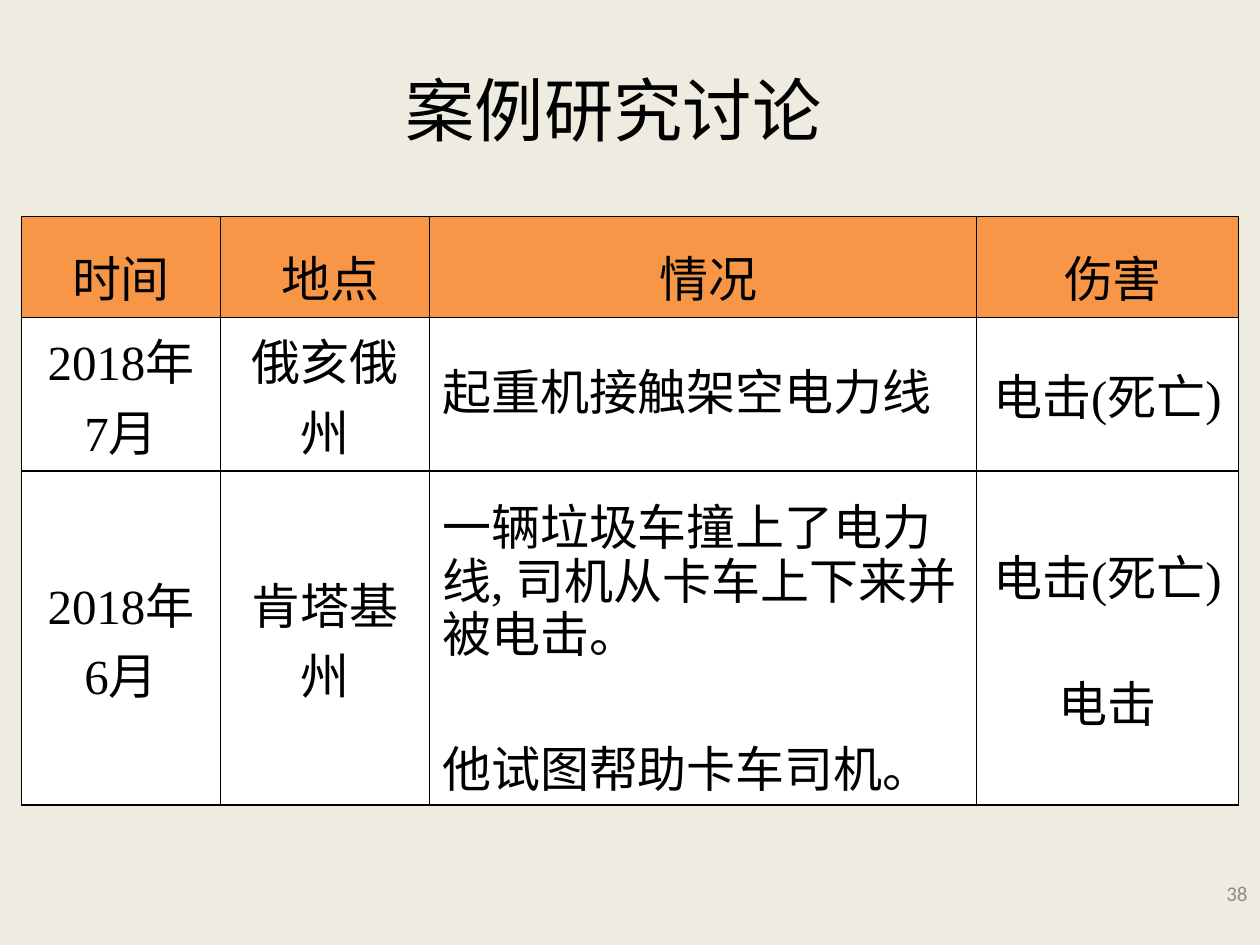
from lxml import etree
from pptx import Presentation
from pptx import util as u
from pptx.dml.color import RGBColor
from pptx.enum import text
from pptx.oxml import ns

COLORS = {
    "background": "EEECE1",
    "header": "F79646",
    "body": "FFFFFF",
    "ink": "000000",
    "page": "8C8C8C",
}
SERIF = "Times New Roman"
COLUMN_WIDTHS = (1.58, 1.66, 4.34, 2.08)
ROW_HEIGHTS = (0.8, 1.22, 2.65)
SITUATION = 2  # the left-aligned column

# Each cell is a list of paragraphs
CASES = [
    [["时间"], [" 地点"], [" 情况"], [" 伤害"]],
    [["2018年", "7月"], ["俄亥俄州"], ["起重机接触架空电力线"], ["电击(死亡)"]],
    [["2018年", "6月"], ["肯塔基州"],
     ["一辆垃圾车撞上了电力线, 司机从卡车上下来并被电击。", "他试图帮助卡车司机。"],
     ["电击(死亡)", "电击"]],
]
# Space in points that separates the two victims of the last case
VICTIM_GAPS = {(2, 2): 46, (2, 3): 31}


def color(name):
    return RGBColor.from_string(COLORS[name])


def style_paragraph(paragraph, size, font, ink, align):
    paragraph.alignment = align
    for run in paragraph.runs:
        run.font.size = u.Pt(size)
        run.font.name = font
        run.font.color.rgb = color(ink)


def add_label(slide, wording, box, size, font, ink, align):
    label = slide.shapes.add_textbox(*map(u.Inches, box))
    frame = label.text_frame
    frame.word_wrap = True
    frame.vertical_anchor = text.MSO_ANCHOR.MIDDLE
    frame.text = wording
    style_paragraph(frame.paragraphs[0], size, font, ink, align)


def add_borders(cell):
    properties = cell._tc.get_or_add_tcPr()
    for side in ("a:lnL", "a:lnR", "a:lnT", "a:lnB"):
        line = etree.SubElement(properties, ns.qn(side), w=str(u.Pt(1)))
        fill = etree.SubElement(line, ns.qn("a:solidFill"))
        etree.SubElement(fill, ns.qn("a:srgbClr"), val=COLORS["ink"])


def fill_cell(cell, paragraphs, row, column):
    is_header = row == 0
    is_situation = column == SITUATION and not is_header
    add_borders(cell)
    cell.fill.solid()
    cell.fill.fore_color.rgb = color("header" if is_header else "body")
    cell.vertical_anchor = text.MSO_ANCHOR.MIDDLE
    if is_header:
        cell.margin_top = u.Inches(0.19)
    elif (row, column) == (2, SITUATION):
        cell.margin_top = u.Inches(0.24)

    cell.text_frame.text = "\n".join(paragraphs)
    align = text.PP_ALIGN.LEFT if is_situation else text.PP_ALIGN.CENTER
    for paragraph in cell.text_frame.paragraphs:
        style_paragraph(paragraph, 28, SERIF, "ink", align)
        if is_situation:
            paragraph.line_spacing = 0.76
    if (row, column) in VICTIM_GAPS:
        paragraph.space_before = u.Pt(VICTIM_GAPS[row, column])


def add_case_table(slide):
    table = slide.shapes.add_table(
        len(ROW_HEIGHTS), len(COLUMN_WIDTHS), u.Inches(0.17), u.Inches(1.72),
        u.Inches(sum(COLUMN_WIDTHS)), u.Inches(sum(ROW_HEIGHTS))).table
    for column, width in zip(table.columns, COLUMN_WIDTHS):
        column.width = u.Inches(width)
    for row, height in zip(table.rows, ROW_HEIGHTS):
        row.height = u.Inches(height)
    for r, case in enumerate(CASES):
        for c, paragraphs in enumerate(case):
            fill_cell(table.cell(r, c), paragraphs, r, c)


def main():
    deck = Presentation()
    deck.slide_width, deck.slide_height = u.Inches(10), u.Inches(7.5)
    slide = deck.slides.add_slide(deck.slide_layouts[6])
    slide.background.fill.solid()
    slide.background.fill.fore_color.rgb = color("background")

    # Title
    add_label(slide, "案例研究讨论", (0.37, 0.55, 9, 0.62), 39.6, SERIF,
              "ink", text.PP_ALIGN.CENTER)
    # Accident cases
    add_case_table(slide)
    # Page number
    add_label(slide, "38", (7.75, 6.89, 2.25, 0.4), 12, "Calibri",
              "page", text.PP_ALIGN.RIGHT)

    deck.save("out.pptx")


if __name__ == "__main__":
    main()
